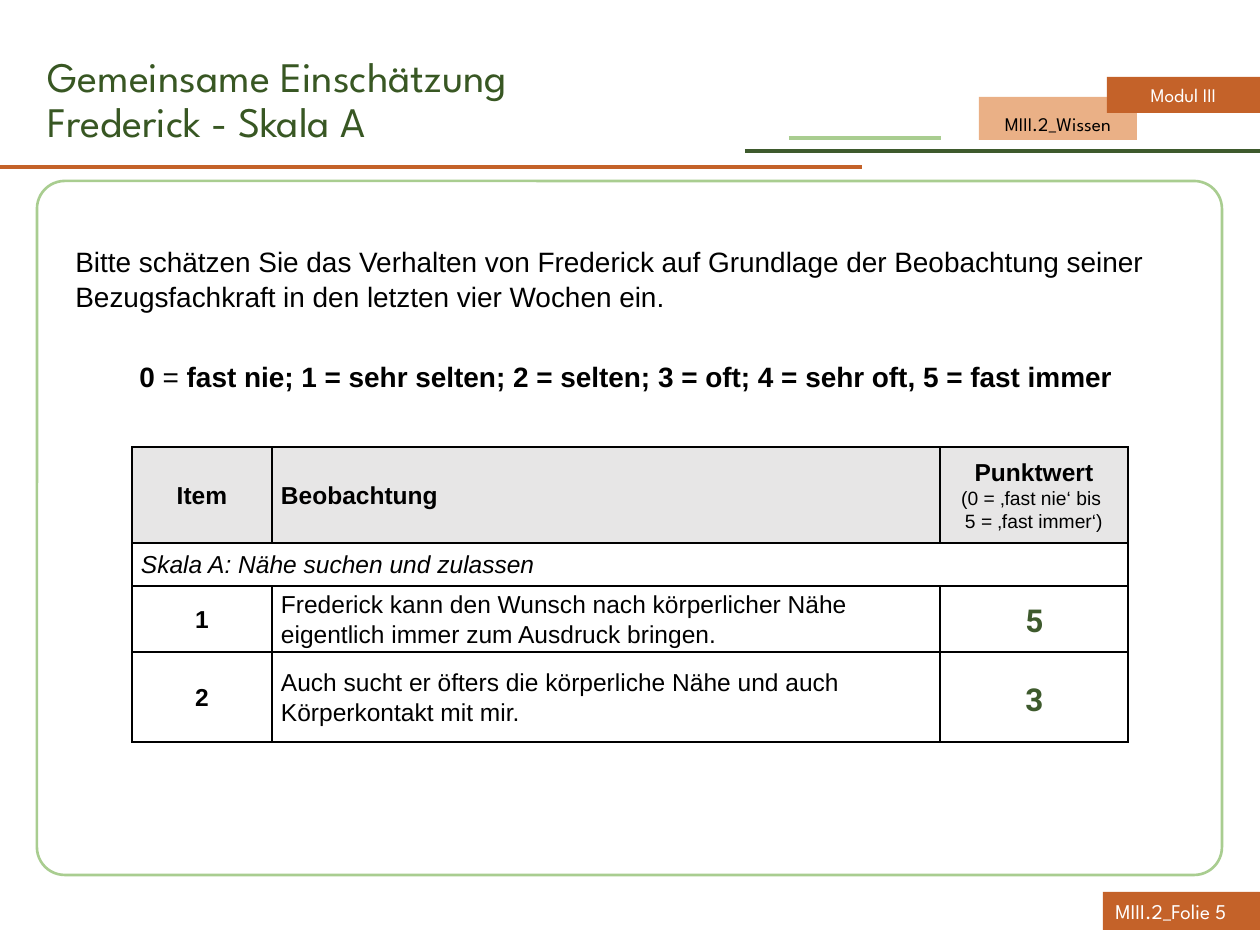
from lxml import etree
from pptx import Presentation
from pptx.dml.color import RGBColor
from pptx.enum.shapes import MSO_CONNECTOR, MSO_SHAPE
from pptx.enum.text import MSO_ANCHOR, PP_ALIGN
from pptx.oxml.ns import qn
from pptx.util import Pt

LEFT, MID = PP_ALIGN.LEFT, PP_ALIGN.CENTER
TOP, HALF = MSO_ANCHOR.TOP, MSO_ANCHOR.MIDDLE
RECT, ROUND = MSO_SHAPE.RECTANGLE, MSO_SHAPE.ROUNDED_RECTANGLE
STRAIGHT = MSO_CONNECTOR.STRAIGHT

RUST = RGBColor(0xC4, 0x62, 0x29)
PEACH = RGBColor(0xEA, 0xB0, 0x86)
MOSS = RGBColor(0x3E, 0x5A, 0x2D)
LIME = RGBColor(0xA9, 0xCD, 0x90)
PINE = RGBColor(0x38, 0x57, 0x23)
GREY = RGBColor(0xE7, 0xE6, 0xE6)
BLACK = RGBColor(0, 0, 0)
WHITE = RGBColor(255, 255, 255)

HEAD, BODY, SCORE = "League Spartan", "Arial", "Roboto"
SCALE = 914400 / 126


def px(*nums):
    return [round(num * SCALE) for num in nums]


def write(para, runs, font, color, align=LEFT, space=1.0):
    para.alignment = align
    para.line_spacing = space
    for text, size, bold, slant in runs:
        for step, part in enumerate(text.split("\n")):
            if step:
                para.add_line_break()
            run = para.add_run()
            run.text = part
            run.font.name = font
            run.font.size = Pt(size)
            run.font.bold = bold
            run.font.italic = slant
            run.font.color.rgb = color


def plain(text, size):
    return [(text, size, False, False)]


def strong(text, size):
    return [(text, size, True, False)]


def add_text(slide, box):
    frame = slide.shapes.add_textbox(*px(*box)).text_frame
    frame.word_wrap = True
    frame.vertical_anchor = TOP
    return frame


def add_rule(slide, start, end, y, color):
    rule = slide.shapes.add_connector(STRAIGHT, *px(start, y, end, y))
    rule.line.color.rgb = color
    rule.line.width = Pt(2.25)
    etree.SubElement(rule._element.spPr, qn("a:effectLst"))


def add_tag(slide, box, fill, text, size, color, align=MID, space=1.0):
    tag = slide.shapes.add_shape(RECT, *px(*box))
    tag.shadow.inherit = False
    tag.fill.solid()
    tag.fill.fore_color.rgb = fill
    tag.line.fill.background()
    frame = tag.text_frame
    frame.word_wrap = True
    frame.vertical_anchor = HALF
    write(frame.paragraphs[0], plain(text, size), HEAD, color, align, space)


def add_head(slide, box):
    x, y, w, h = box
    add_rule(slide, x, x + 862, y + 167, RUST)
    add_rule(slide, x + 745, x + w, y + 151, MOSS)
    add_rule(slide, x + 789, x + 941, y + 138, LIME)
    add_tag(slide, (x + 979, y + 97, 158, 43), PEACH,
            "MIII.2_Wissen", 11, BLACK, space=1.5)
    add_tag(slide, (x + 1107, y + 77, 153, 36), RUST, "Modul III", 11, WHITE)
    frame = add_text(slide, (x + 35, y + 50, 720, 98))
    title = "Gemeinsame Einschätzung\nFrederick - Skala A"
    write(frame.paragraphs[0], plain(title, 24), HEAD, PINE, space=0.9)


def add_panel(slide, box):
    panel = slide.shapes.add_shape(ROUND, *px(*box))
    panel.shadow.inherit = False
    panel.adjustments[0] = 0.04
    panel.fill.background()
    panel.line.color.rgb = LIME
    panel.line.width = Pt(1.5)


def add_intro(slide, box):
    frame = add_text(slide, box)
    task = ("Bitte schätzen Sie das Verhalten von Frederick auf Grundlage der "
            "Beobachtung seiner Bezugsfachkraft in den letzten vier Wochen ein.")
    write(frame.paragraphs[0], plain(task, 16), BODY, BLACK, space=1.06)
    key = frame.add_paragraph()
    key.space_before = Pt(25)
    steps = " fast nie; 1 = sehr selten; 2 = selten; 3 = oft; 4 = sehr oft, 5 = fast immer"
    runs = strong("0", 16) + plain(" =", 16) + strong(steps, 16)
    write(key, runs, BODY, BLACK, MID, 1.06)


def add_edge(cell, side, width):
    edge = etree.SubElement(cell._tc.get_or_add_tcPr(), qn("a:ln" + side),
                            w=str(Pt(width)))
    paint = etree.SubElement(edge, qn("a:solidFill"))
    etree.SubElement(paint, qn("a:srgbClr"), val=str(BLACK))


def style_cell(cell, row):
    sides = {"L": 1, "R": 1, "T": 1.5 if row == 1 else 1,
             "B": 1.5 if row == 0 else 1}
    for side, width in sides.items():
        add_edge(cell, side, width)
    if row == 0:
        cell.fill.solid()
        cell.fill.fore_color.rgb = GREY
    else:
        cell.fill.background()
    cell.vertical_anchor = HALF
    cell.margin_left, cell.margin_right = px(9, 9)
    cell.margin_top = cell.margin_bottom = 0


def add_grid(slide, box):
    x, y, w, h = box
    cols, rows = (140, 668, 188), (96, 43, 66, 90)
    grid = slide.shapes.add_table(len(rows), len(cols), *px(*box)).table
    grid.first_row = grid.horz_banding = False
    for col, width in zip(grid.columns, px(*cols)):
        col.width = width
    for row, height in zip(grid.rows, px(*rows)):
        row.height = height
    range_text = "\n(0 = ‚fast nie‘ bis \n5 = ‚fast immer‘)"
    data = [
        [strong("Item", 14), strong("Beobachtung", 14),
         strong("Punktwert", 14) + plain(range_text, 11)],
        [[("Skala A: Nähe suchen und zulassen", 14, False, True)], [], []],
        [strong("1", 14),
         plain("Frederick kann den Wunsch nach körperlicher Nähe "
               "eigentlich immer zum Ausdruck bringen.", 14), []],
        [strong("2", 14),
         plain("Auch sucht er öfters die körperliche Nähe und auch "
               "Körperkontakt mit mir.", 14), []],
    ]
    grid.cell(1, 0).merge(grid.cell(1, 2))
    for r, line in enumerate(data):
        for c, runs in enumerate(line):
            cell = grid.cell(r, c)
            style_cell(cell, r)
            align = LEFT if c == 1 or r == 1 else MID
            write(cell.text_frame.paragraphs[0], runs, BODY, BLACK, align, 1.07)
    for score, top in (("5", 148), ("3", 227)):
        frame = add_text(slide, (x + 881, y + top, 69, 50))
        write(frame.paragraphs[0], strong(score, 18), SCORE, MOSS)


def main():
    deck = Presentation()
    deck.slide_width, deck.slide_height = px(1260, 945)
    slide = deck.slides.add_slide(deck.slide_layouts[6])
    add_head(slide, (0, 0, 1260, 170))
    add_panel(slide, (37, 181, 1185, 694))
    add_intro(slide, (63, 236, 1126, 160))
    add_grid(slide, (132, 447, 996, 295))
    add_tag(slide, (1103, 892, 157, 38), RUST, "MIII.2_Folie 5", 12, WHITE, LEFT)
    deck.save("out.pptx")


if __name__ == "__main__":
    main()
